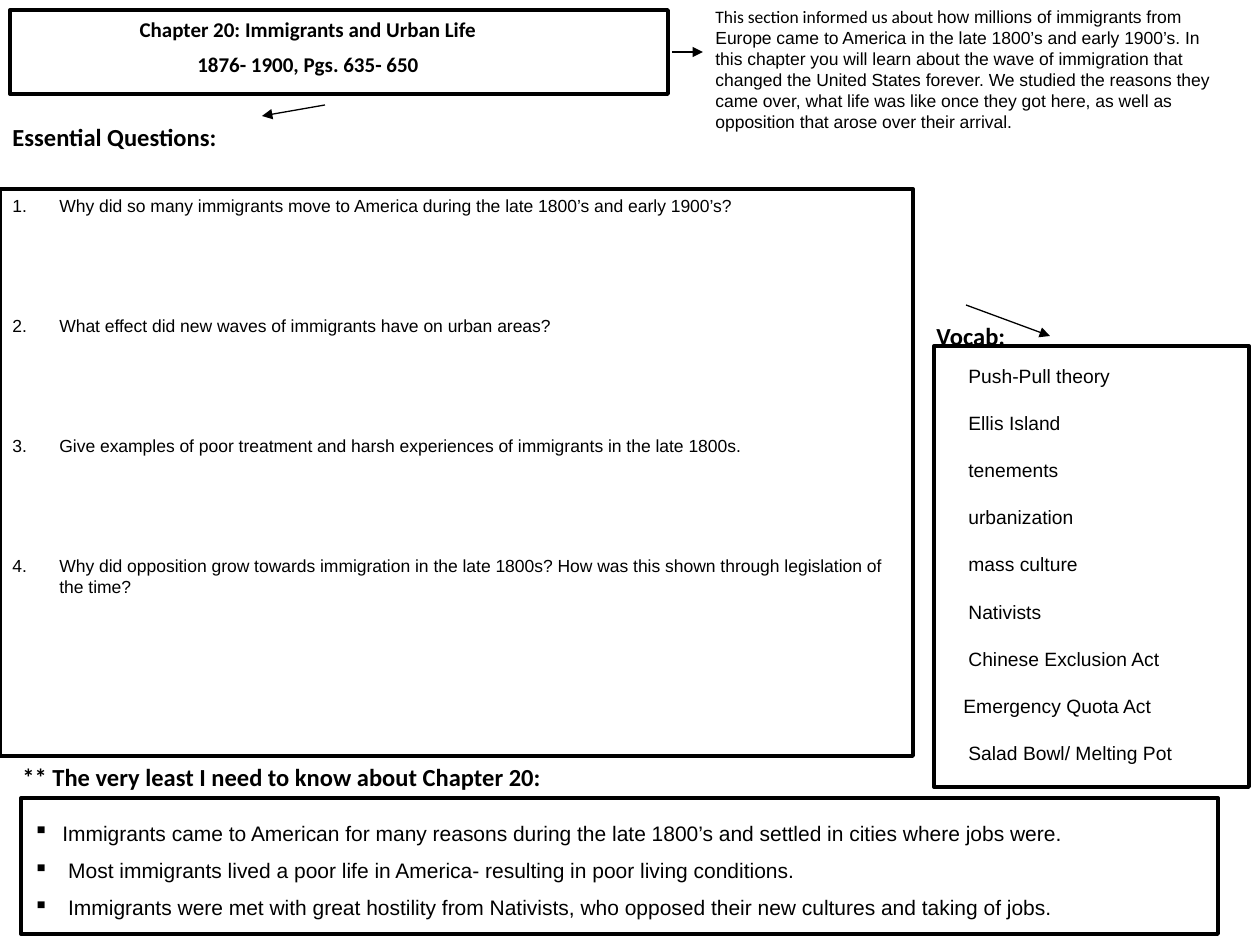
"""Build a one-page study guide for a chapter on immigration and urban life."""
from dataclasses import dataclass, field
from typing import NamedTuple

import pptx
import pptx.dml.color
import pptx.enum.shapes
import pptx.enum.text
import pptx.oxml
import pptx.oxml.ns
import pptx.util

EMU_PER_PX = 914400 / 126


class Box(NamedTuple):
    left: int
    top: int
    width: int
    height: int


class Arrow(NamedTuple):
    start_x: int
    start_y: int
    end_x: int
    end_y: int


class Run(NamedTuple):
    text: str
    font: dict


@dataclass
class Line:
    runs: list[Run]
    indent: int = 0
    bullet: str = ""


@dataclass
class Block:
    box: Box
    lines: list[Line]
    gap: int = 0
    align: pptx.enum.text.PP_ALIGN = pptx.enum.text.PP_ALIGN.LEFT


def font(name: str, size: int, bold: bool = False) -> dict:
    """Return the format values of one type style."""
    return {"name": name, "size": pptx.util.Pt(size), "bold": bold}


@dataclass(frozen=True)
class Theme:
    ink: pptx.dml.color.RGBColor = pptx.dml.color.RGBColor(0, 0, 0)
    frame_width: float = 2.25
    arrow_width: float = 0.75
    title: dict = field(default_factory=lambda: font("Calibri", 12, True))
    heading: dict = field(default_factory=lambda: font("Calibri", 14, True))
    lead: dict = field(default_factory=lambda: font("Calibri", 10))
    body: dict = field(default_factory=lambda: font("Arial", 10))
    term: dict = field(default_factory=lambda: font("Arial", 11))
    takeaway: dict = field(default_factory=lambda: font("Arial", 12))


THEME = Theme()
NUMBERED = '<a:buAutoNum {} type="arabicPeriod"/>'
SQUARE = '<a:buChar {} char="▪"/>'

TITLE = Block(
    Box(0, 10, 616, 115),
    [Line([Run(text, THEME.title)]) for text in (
        "Chapter 20: Immigrants and Urban Life", "1876- 1900, Pgs. 635- 650")],
    gap=10, align=pptx.enum.text.PP_ALIGN.CENTER)

QUESTIONS = (
    "Why did so many immigrants move to America during the late 1800’s and early 1900’s?",
    "What effect did new waves of immigrants have on urban areas?",
    "Give examples of poor treatment and harsh experiences of immigrants in the late 1800s.",
    "Why did opposition grow towards immigration in the late 1800s? "
    "How was this shown through legislation of the time?",
)
TAKEAWAYS = (
    "Immigrants came to American for many reasons during the late 1800’s and settled "
    "in cities where jobs were.",
    " Most immigrants lived a poor life in America- resulting in poor living conditions.",
    " Immigrants were met with great hostility from Nativists, who opposed their new "
    "cultures and taking of jobs.",
)
TERMS = {
    "Push-Pull theory": 21, "Ellis Island": 21, "tenements": 21, "urbanization": 21,
    "mass culture": 21, "Nativists": 21, "Chinese Exclusion Act": 21,
    "Emergency Quota Act": 16, "Salad Bowl/ Melting Pot": 21,
}
SUMMARY = [
    Run("This section informed us about ", THEME.lead),
    Run("how millions of immigrants from Europe came to America in the late 1800’s and "
        "early 1900’s. In this chapter you will learn about the wave of immigration that "
        "changed the United States forever. We studied the reasons they came over, what "
        "life was like once they got here, as well as opposition that arose over their "
        "arrival.", THEME.body),
]
HEADINGS = {
    "** The very least I need to know about Chapter 20:": Box(10, 756, 725, 42),
    "Essential Questions:": Box(0, 116, 725, 42),
    "Vocab:": Box(924, 315, 320, 42),
}
FRAMES = [Box(10, 10, 658, 84), Box(21, 798, 1197, 136),
          Box(0, 189, 913, 567), Box(934, 346, 315, 441)]
ARROWS = [Arrow(325, 105, 262, 116), Arrow(966, 305, 1050, 336), Arrow(672, 52, 703, 52)]
BLOCKS = [
    *(Block(box, [Line([Run(text, THEME.heading)])]) for text, box in HEADINGS.items()),
    Block(Box(21, 814, 1061, 120),
          [Line([Run(text, THEME.takeaway)], 29, SQUARE) for text in TAKEAWAYS], gap=12),
    Block(Box(0, 189, 903, 469),
          [Line([Run(text, THEME.body)], 47, NUMBERED) for text in QUESTIONS], gap=99),
    Block(Box(935, 358, 294, 429),
          [Line([Run(text, THEME.term)], indent) for text, indent in TERMS.items()], gap=24),
    Block(Box(703, 0, 525, 171), [Line(SUMMARY)]),
]


def px(length: float) -> pptx.util.Emu:
    """Turn a length in px into EMU."""
    return pptx.util.Emu(round(length * EMU_PER_PX))


def apply(target: object, values: dict) -> None:
    """Set every format value on the target."""
    for name, value in values.items():
        setattr(target, name, value)


def add_xml(parent: object, markup: str) -> None:
    """Append one drawing element to the parent."""
    parent.append(pptx.oxml.parse_xml(markup.format(pptx.oxml.ns.nsdecls("a"))))


def write_block(shape: object, block: Block) -> None:
    """Fill a shape with the formatted lines of a block."""
    frame = shape.text_frame
    apply(frame, {"word_wrap": True, "auto_size": pptx.enum.text.MSO_AUTO_SIZE.NONE,
                  "vertical_anchor": pptx.enum.text.MSO_ANCHOR.TOP})
    for index, line in enumerate(block.lines):
        paragraph = frame.add_paragraph() if index else frame.paragraphs[0]
        paragraph.alignment = block.align
        paragraph.space_before = px(block.gap if index else 0)
        properties = paragraph._p.get_or_add_pPr()
        if line.indent:
            properties.set("marL", str(px(line.indent)))
        if line.bullet:
            properties.set("indent", str(px(-line.indent)))
            add_xml(properties, line.bullet)
        for part in line.runs:
            run = paragraph.add_run()
            run.text = part.text
            apply(run.font, part.font)
            run.font.color.rgb = THEME.ink


def draw_title(slide: object, block: Block) -> None:
    """Place and fill the title placeholder."""
    title = slide.shapes.title
    apply(title, {name: px(value) for name, value in block.box._asdict().items()})
    write_block(title, block)


def draw_frame(slide: object, box: Box) -> None:
    """Draw an unfilled rectangular frame."""
    frame = slide.shapes.add_shape(
        pptx.enum.shapes.MSO_SHAPE.RECTANGLE, *map(px, box))
    frame.shadow.inherit = False
    frame.fill.background()
    frame.line.color.rgb = THEME.ink
    frame.line.width = pptx.util.Pt(THEME.frame_width)


def draw_arrow(slide: object, arrow: Arrow) -> None:
    """Draw a thin line with a triangle at its end."""
    connector = slide.shapes.add_connector(
        pptx.enum.shapes.MSO_CONNECTOR.STRAIGHT, *map(px, arrow))
    connector.line.color.rgb = THEME.ink
    connector.line.width = pptx.util.Pt(THEME.arrow_width)
    properties = connector._element.spPr
    add_xml(properties.find(pptx.oxml.ns.qn("a:ln")), '<a:tailEnd {} type="triangle"/>')
    add_xml(properties, "<a:effectLst {}/>")


def main() -> None:
    """Assemble and save the study guide."""
    guide = pptx.Presentation()
    apply(guide, {"slide_width": px(1260), "slide_height": px(945)})
    slide = guide.slides.add_slide(guide.slide_layouts[5])
    draw_title(slide, TITLE)
    for box in FRAMES:
        draw_frame(slide, box)
    for block in BLOCKS:
        write_block(slide.shapes.add_textbox(*map(px, block.box)), block)
    for arrow in ARROWS:
        draw_arrow(slide, arrow)
    guide.save("out.pptx")


if __name__ == "__main__":
    main()
